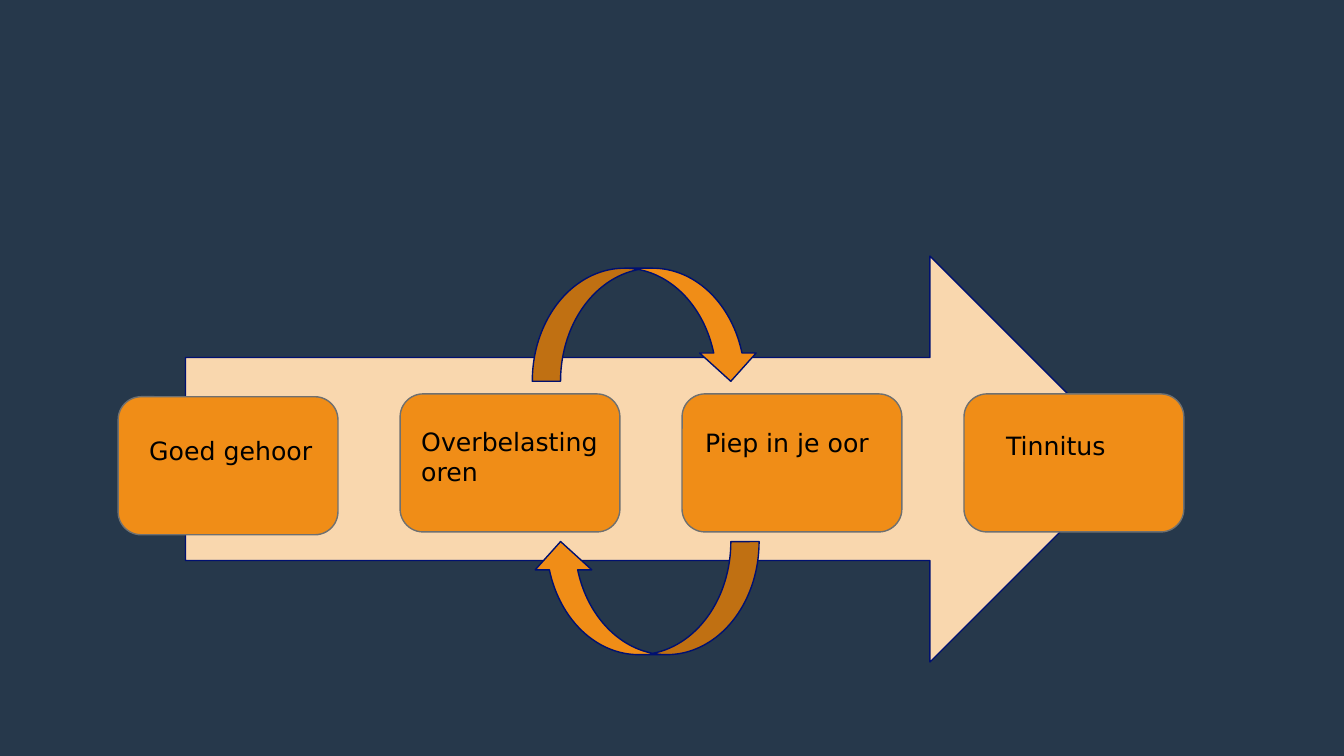
import pptx
import pptx.dml.color
import pptx.enum.shapes
import pptx.enum.text
import pptx.util

Pt = pptx.util.Pt
SHAPES = pptx.enum.shapes.MSO_SHAPE

ORANGE, PEACH, NAVY, GREY = "F08D17", "F9D7AE", "001070", "6F7070"
STAGE_WIDTH, STAGE_HEIGHT, STAGE_PITCH = 157, 98.6, 201.4
LABEL_FORMAT = {"name": "DejaVu Sans", "size": Pt(18)}

# Text, vertical shift of the stage, and label box relative to the stage
STAGES = [
    ("Goed gehoor", 2, (15.1, 23.8, 138.2, 28.8)),
    ("Overbelasting oren", 0, (8, 19.3, 140.6, 51.1)),
    ("Piep in je oor", 0, (9.4, 20.1, 138.2, 28.8)),
    ("Tinnitus", 0, (22.9, 22.2, 121, 28.8)),
]


def colour(hex_code):
    return pptx.dml.color.RGBColor.from_string(hex_code)


def add_filled_shape(slide, kind, box, fill, line):
    shape = slide.shapes.add_shape(kind, *map(Pt, box))
    shape.shadow.inherit = False
    shape.fill.solid()
    shape.fill.fore_color.rgb = colour(fill)
    shape.line.color.rgb = colour(line)
    shape.line.width = Pt(1)
    return shape


def add_label(slide, box, text):
    frame = slide.shapes.add_textbox(*map(Pt, box)).text_frame
    frame.word_wrap = True
    frame.auto_size = pptx.enum.text.MSO_AUTO_SIZE.SHAPE_TO_FIT_TEXT
    frame.vertical_anchor = pptx.enum.text.MSO_ANCHOR.MIDDLE
    span = frame.paragraphs[0].add_run()
    span.text = text
    for name, value in LABEL_FORMAT.items():
        setattr(span.font, name, value)
    span.font.color.rgb = colour("000000")


def add_stages(slide, left, top):
    """Place the rounded stages in a row, each with its label."""
    for index, (text, shift, label) in enumerate(STAGES):
        x, y = left + index * STAGE_PITCH, top + shift
        add_filled_shape(slide, SHAPES.ROUNDED_RECTANGLE,
                         (x, y, STAGE_WIDTH, STAGE_HEIGHT), ORANGE, GREY)
        label_left, label_top, width, height = label
        add_label(slide, (x + label_left, y + label_top, width, height), text)


def add_cycle(slide, left, top, width, height):
    """Place curved arrows along the top and bottom of the box."""
    arrow_height = 80.8
    for y, rotation in ((top, 0), (top + height - arrow_height, 180)):
        arrow = add_filled_shape(slide, SHAPES.CURVED_DOWN_ARROW,
                                 (left, y, width, arrow_height), ORANGE, NAVY)
        arrow.rotation = rotation


def build_process_slide(deck):
    slide = deck.slides.add_slide(deck.slide_layouts[6])
    slide.background.fill.solid()
    slide.background.fill.fore_color.rgb = colour("26384B")
    add_filled_shape(slide, SHAPES.RIGHT_ARROW, (132.5, 182.9, 676.8, 290), PEACH, NAVY)
    add_stages(slide, 84.4, 281.4)
    add_cycle(slide, 380.2, 191.6, 162, 276)


def main():
    deck = pptx.Presentation()
    deck.slide_width, deck.slide_height = Pt(960), Pt(540)
    build_process_slide(deck)
    deck.save("out.pptx")


if __name__ == "__main__":
    main()
